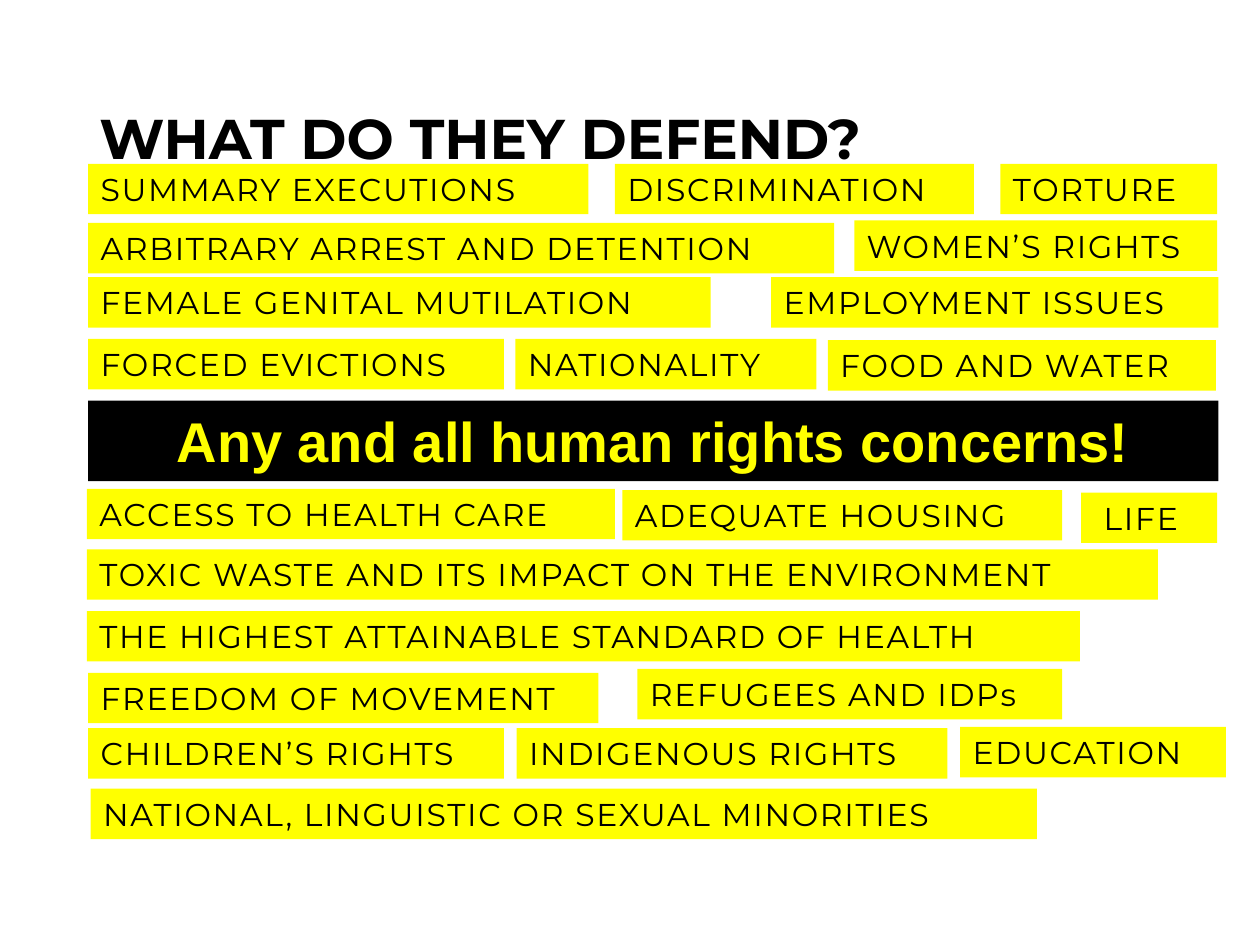
from dataclasses import dataclass
from pptx import Presentation
from pptx.dml.color import RGBColor
from pptx.enum.shapes import MSO_SHAPE
from pptx.enum.text import MSO_ANCHOR, MSO_AUTO_SIZE, PP_ALIGN
from pptx.util import Inches, Pt


@dataclass(frozen=True)
class Theme:
    black: str = "000000"
    yellow: str = "FFFF00"
    sans: str = "Montserrat"
    strong: str = "Arial"
    large: int = 32
    small: int = 18


def write(frame, text, *, font, size, color, bold=False, align=PP_ALIGN.LEFT,
          anchor=MSO_ANCHOR.TOP, track=0, line=1.0):
    """Fill a text frame; track is letter spacing in points."""
    frame.word_wrap = True
    frame.vertical_anchor = anchor
    para = frame.paragraphs[0]
    para.alignment = align
    para.line_spacing = line
    run = para.add_run()
    run.text = text
    run.font.name = font
    run.font.size = Pt(size)
    run.font.bold = bold
    run.font.color.rgb = RGBColor.from_string(color)
    if track:
        run.font._element.set("spc", str(track * 100))


class Deck:
    def __init__(self, theme):
        self.theme = theme
        self.file = Presentation()
        self.file.slide_width = Inches(10)
        self.file.slide_height = Inches(7.5)
        self.slide = self.file.slides.add_slide(self.file.slide_layouts[6])

    def title(self, text, *box):
        frame = self.slide.shapes.add_textbox(*map(Inches, box)).text_frame
        write(frame, text, font=self.theme.sans, size=self.theme.large,
              color=self.theme.black, bold=True, anchor=MSO_ANCHOR.MIDDLE, line=0.9)

    def block(self, fill, *box):
        shape = self.slide.shapes.add_shape(MSO_SHAPE.RECTANGLE, *map(Inches, box))
        shape.shadow.inherit = False
        shape.fill.solid()
        shape.fill.fore_color.rgb = RGBColor.from_string(fill)
        shape.line.fill.background()
        shape.text_frame.auto_size = MSO_AUTO_SIZE.SHAPE_TO_FIT_TEXT
        return shape.text_frame

    def banner(self, text, *box):
        write(self.block(self.theme.black, *box), text, font=self.theme.strong,
              size=self.theme.large, color=self.theme.yellow, bold=True,
              align=PP_ALIGN.CENTER)

    def label(self, text, left, top, width, inset=0.1):
        frame = self.block(self.theme.yellow, left, top, width, 0.4)
        frame.margin_left = Inches(inset)
        write(frame, text, font=self.theme.sans, size=self.theme.small,
              color=self.theme.black, track=1)


# Text, left, top, width and, where it differs, left inset
LABELS = [
    ("SUMMARY EXECUTIONS", 0.7, 1.3, 3.97),
    ("DISCRIMINATION", 4.88, 1.3, 2.85),
    ("TORTURE", 7.94, 1.3, 1.72),
    ("ARBITRARY ARREST AND DETENTION", 0.7, 1.77, 5.92),
    ("WOMEN’S RIGHTS", 6.78, 1.75, 2.88),
    ("FEMALE GENITAL MUTILATION", 0.7, 2.2, 4.94),
    ("EMPLOYMENT ISSUES", 6.12, 2.2, 3.55),
    ("FORCED EVICTIONS", 0.7, 2.69, 3.3),
    ("NATIONALITY", 4.09, 2.69, 2.39),
    ("FOOD AND WATER", 6.57, 2.7, 3.08),
    ("ACCESS TO HEALTH CARE", 0.69, 3.88, 4.19),
    ("ADEQUATE HOUSING", 4.94, 3.89, 3.49),
    ("LIFE", 8.58, 3.91, 1.08, 0.18),
    ("TOXIC WASTE AND ITS IMPACT ON THE ENVIRONMENT", 0.69, 4.36, 8.5),
    ("THE HIGHEST ATTAINABLE STANDARD OF HEALTH", 0.69, 4.85, 7.88),
    ("FREEDOM OF MOVEMENT", 0.7, 5.34, 4.05),
    ("REFUGEES AND IDPs", 5.06, 5.31, 3.37),
    ("CHILDREN’S RIGHTS", 0.7, 5.78, 3.3),
    ("INDIGENOUS RIGHTS", 4.1, 5.78, 3.42),
    ("EDUCATION", 7.62, 5.77, 2.11),
    ("NATIONAL, LINGUISTIC OR SEXUAL MINORITIES", 0.72, 6.26, 7.51),
]


def main():
    deck = Deck(Theme())
    # Heading and central message
    deck.title("WHAT DO THEY DEFEND?", 0.69, 0.4, 8.62, 1.45)
    deck.banner("Any and all human rights concerns!", 0.7, 3.18, 8.97, 0.64)
    # Rights and issues around it
    for item in LABELS:
        deck.label(*item)
    deck.file.save("out.pptx")


if __name__ == "__main__":
    main()
